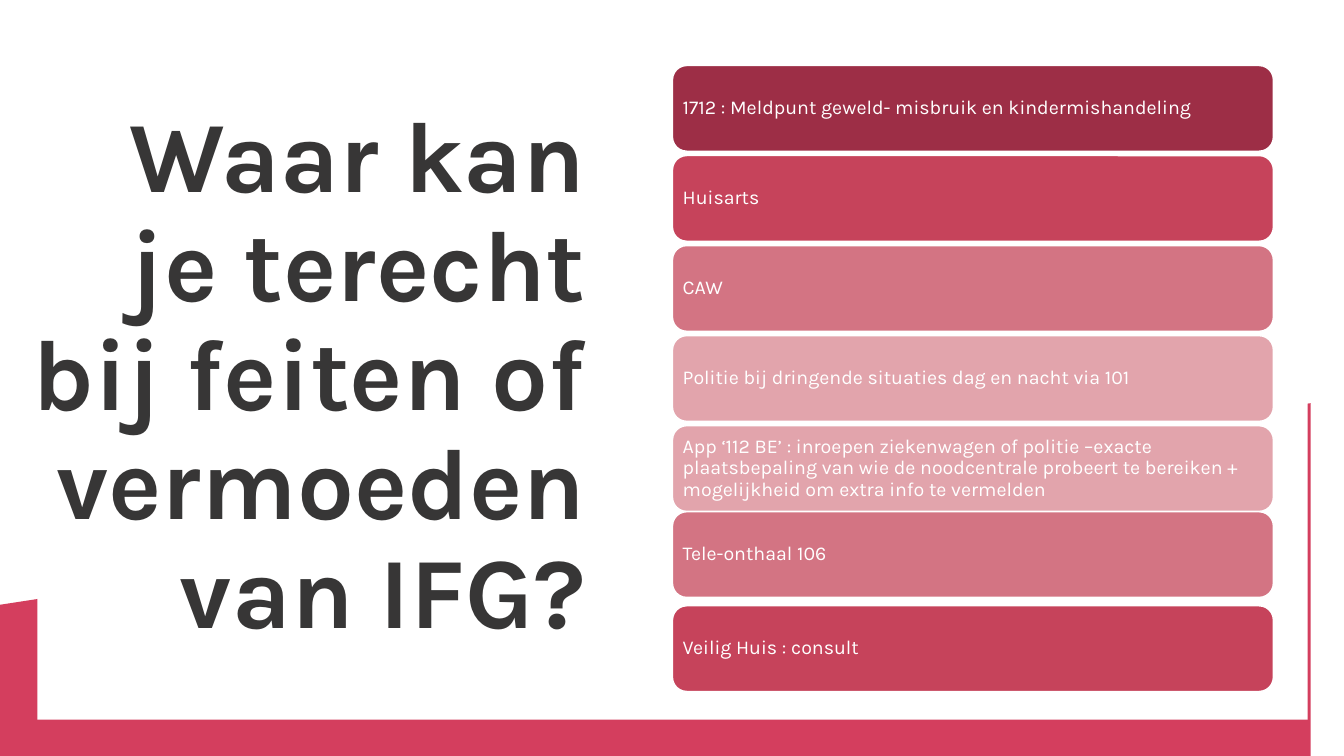
from dataclasses import dataclass

from pptx import Presentation
from pptx import util as u
from pptx.dml.color import RGBColor
from pptx.enum import shapes, text

HUES = {
    "frame": "D43E5E", "white": "FFFFFF", "ink": "373636",
    "wine": "9D2E46", "rose": "C6435B", "pink": "D37483", "blush": "E2A4AC",
}
FONT = "Karla"
WIDE, HIGH = 13.33, 7.5
TOP, STEP = 0.65, 5.36 / 6


@dataclass
class Bar:
    label: str
    hue: str
    shift: float = 0


BARS = [
    Bar("1712 : Meldpunt geweld- misbruik en kindermishandeling", "wine"),
    Bar("Huisarts", "rose"),
    Bar("CAW", "pink"),
    Bar("Politie bij dringende situaties dag en nacht via 101", "blush"),
    Bar("App ‘112 BE’ : inroepen ziekenwagen of politie –exacte plaatsbepaling "
        "van wie de noodcentrale probeert te bereiken + mogelijkheid om extra "
        "info te vermelden", "blush"),
    Bar("Tele-onthaal 106", "pink", -0.04),
    Bar("Veilig Huis : consult", "rose"),
]


def tint(name: str) -> RGBColor:
    return RGBColor.from_string(HUES[name])


def paint(shape, hue: str) -> None:
    shape.shadow.inherit = False
    shape.fill.solid()
    shape.fill.fore_color.rgb = tint(hue)
    shape.line.fill.background()


def write(shape, label: str, size: int, hue: str, align, inset: float,
          bold: bool = False) -> None:
    frame = shape.text_frame
    frame.word_wrap = True
    frame.auto_size = text.MSO_AUTO_SIZE.NONE
    frame.vertical_anchor = text.MSO_ANCHOR.MIDDLE
    frame.margin_left = frame.margin_right = u.Inches(inset)
    frame.margin_top = frame.margin_bottom = u.Inches(inset)
    para = frame.paragraphs[0]
    para.alignment = align
    para.line_spacing = 0.9
    para.space_before = u.Pt(0)
    run = para.add_run()
    run.text = label
    run.font.name = FONT
    run.font.size = u.Pt(size)
    run.font.bold = bold
    run.font.color.rgb = tint(hue)


def draw_bar(slide, row: int, bar: Bar) -> None:
    top = TOP + row * STEP + bar.shift
    box = slide.shapes.add_shape(
        shapes.MSO_SHAPE.ROUNDED_RECTANGLE,
        u.Inches(6.67), u.Inches(top), u.Inches(5.96), u.Inches(0.85))
    paint(box, bar.hue)
    box.line.color.rgb = tint("white")
    box.line.width = u.Pt(1)
    write(box, bar.label, 14, "white", text.PP_ALIGN.LEFT, 0.06)


def main() -> None:
    deck = Presentation()
    deck.slide_width, deck.slide_height = u.Inches(WIDE), u.Inches(HIGH)
    slide = deck.slides.add_slide(deck.slide_layouts[5])

    # Slanted frame and white panel
    pen = slide.shapes.build_freeform(WIDE, 3.57, scale=float(u.Inches(1)))
    pen.add_line_segments([(WIDE, HIGH), (0, HIGH), (0, 6.4)], close=True)
    paint(pen.convert_to_shape(), "frame")
    panel = slide.shapes.add_shape(
        shapes.MSO_SHAPE.RECTANGLE,
        u.Inches(0.37), u.Inches(0.37), u.Inches(12.6), u.Inches(6.77))
    paint(panel, "white")

    # Title, raised above the panel
    title = slide.shapes.title
    panel.element.addnext(title.element)
    title.left, title.top = u.Inches(0.18), u.Inches(0.55)
    title.width, title.height = u.Inches(5.63), u.Inches(6.4)
    write(title, "Waar kan je terecht bij feiten of vermoeden van IFG?",
          72, "ink", text.PP_ALIGN.RIGHT, 0, bold=True)

    # Contact points
    for row, bar in enumerate(BARS):
        draw_bar(slide, row, bar)

    deck.save("out.pptx")


if __name__ == "__main__":
    main()
